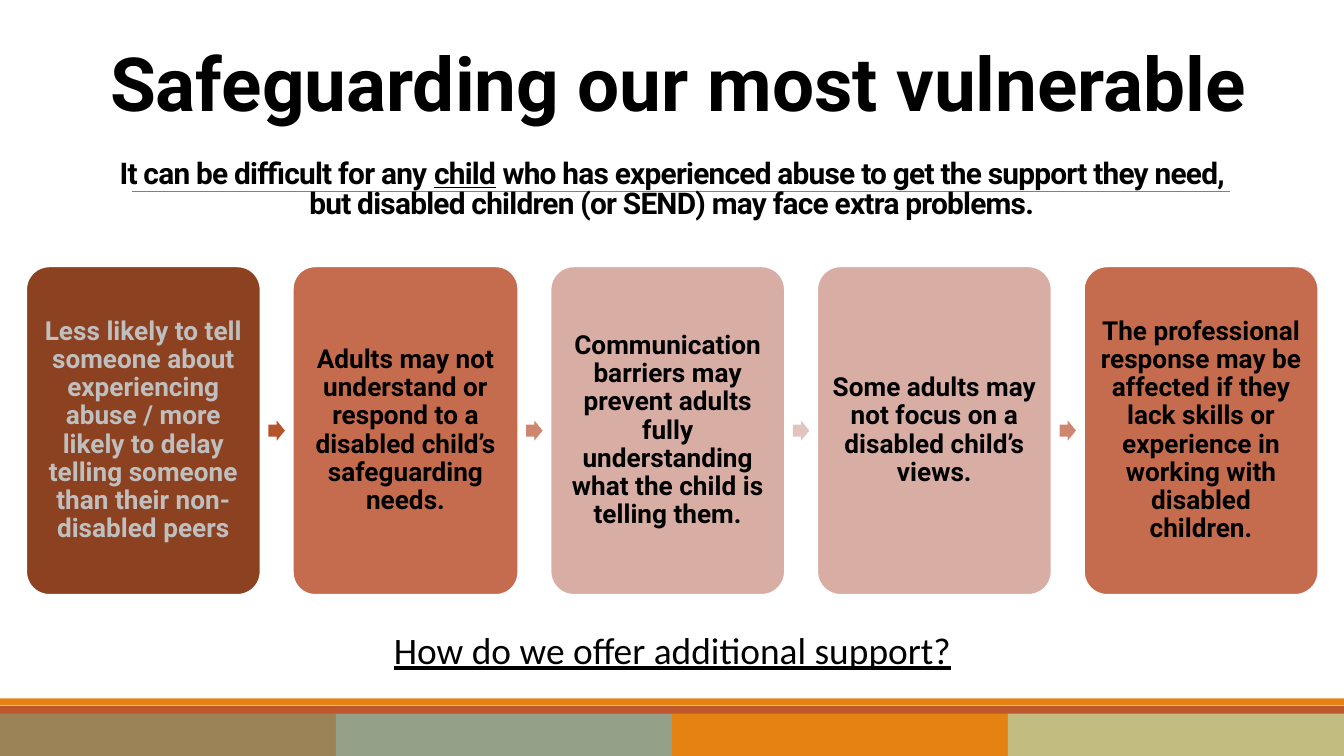
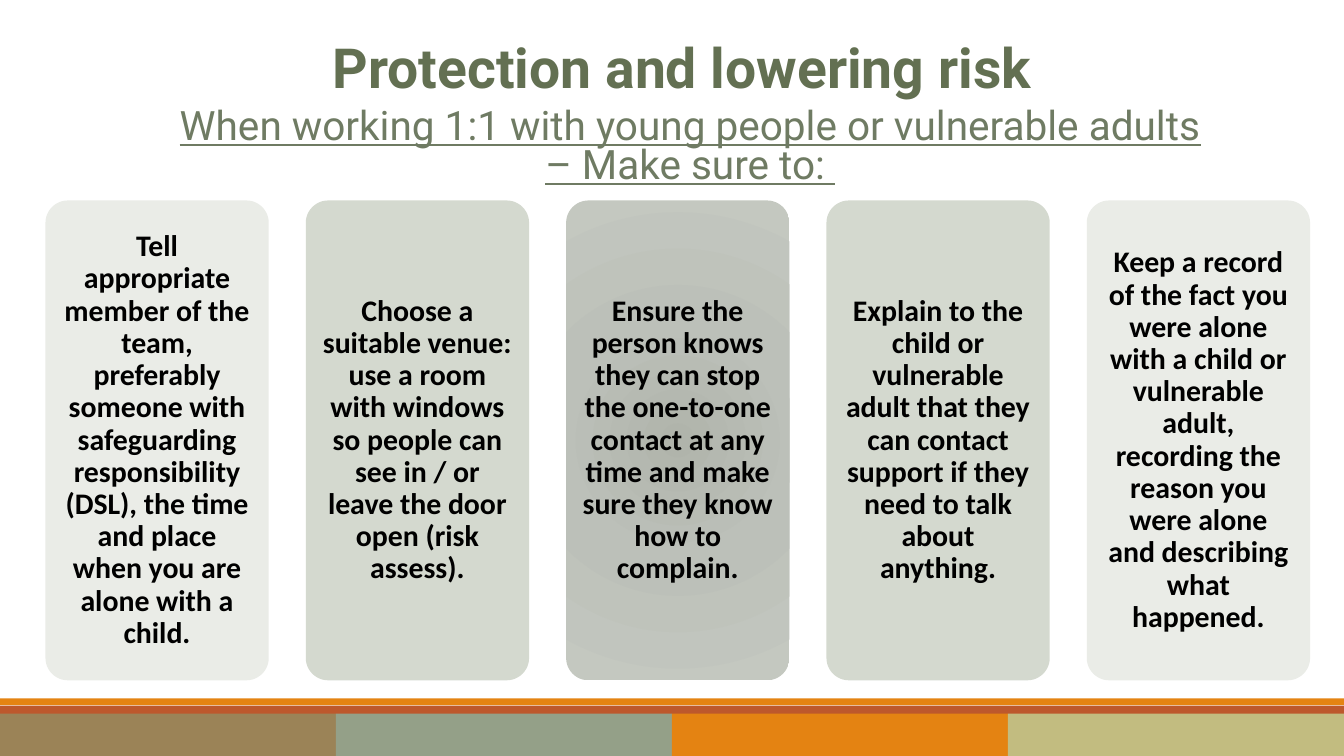
from lxml.etree import SubElement
from pptx import Presentation
from pptx.dml.color import RGBColor
from pptx.enum.shapes import MSO_CONNECTOR, MSO_SHAPE
from pptx.enum.text import MSO_ANCHOR, PP_ALIGN
from pptx.oxml.ns import qn
from pptx.util import Cm, Pt

COLORS = {
    "black": "000000", "white": "FFFFFF", "silver": "BFBFBF", "rule": "808080",
    "rust": "BD582C", "orange": "E48312", "tan": "9B8357",
    "sage": "94A088", "khaki": "C2BC80",
    "brown": "8C4121", "clay": "C66C4E", "blush": "D8ADA3",
    "arrow rust": "B5542A", "arrow clay": "CF8670", "arrow blush": "E1C4BE",
    "title green": "637052", "subtitle green": "6F7B63",
    "mist": "EAECE7", "pale sage": "D4D9CF",
    "core gray": "B0B4AB", "mid gray": "BCC0B9", "edge gray": "C4C8C0",
}
SLIDE_WIDTH, SLIDE_HEIGHT = 25.4, 14.29
HEADING_FONT, BODY_FONT = "Roboto", "Calibri"

# Card text, card fill, text colour, card width, fill of the arrow that follows
BARRIERS = [
    ("Less likely to tell someone about experiencing abuse / more likely to delay "
     "telling someone than their non-disabled peers",
     "brown", "silver", 4.44, "arrow rust"),
    ("Adults may not understand or respond to a disabled child’s safeguarding needs.",
     "clay", "black", 4.27, "arrow clay"),
    ("Communication barriers may prevent adults fully understanding what the child "
     "is telling them.", "blush", "black", 4.44, "arrow blush"),
    ("Some adults may not focus on a disabled child’s views.",
     "blush", "black", 4.44, "arrow clay"),
    ("The professional response may be affected if they lack skills or experience in "
     "working with disabled children.", "clay", "black", 4.44, None),
]
PRECAUTIONS = [
    ("Tell appropriate member of the team, preferably someone with safeguarding "
     "responsibility (DSL), the time and place when you are alone with a child.", "mist"),
    ("Choose a suitable venue: use a room with windows so people can see in / or "
     "leave the door open (risk assess).", "pale sage"),
    ("Ensure the person knows they can stop the one-to-one contact at any time and "
     "make sure they know how to complain.", "edge gray"),
    ("Explain to the child or vulnerable adult that they can contact support if they "
     "need to talk about anything.", "pale sage"),
    ("Keep a record of the fact you were alone with a child or vulnerable adult, "
     "recording the reason you were alone and describing what happened.", "mist"),
]


def rgb(name):
    return RGBColor.from_string(COLORS[name])


def lengths(*values):
    return [Cm(value) for value in values]


def add_block(slide, kind, box, fill):
    shape = slide.shapes.add_shape(kind, *lengths(*box))
    shape.shadow.inherit = False
    shape.fill.solid()
    shape.fill.fore_color.rgb = rgb(fill)
    shape.line.fill.background()
    return shape


def style_paragraph(paragraph, font, size, color, bold=False, underline=None, spacing=1.0):
    paragraph.alignment = PP_ALIGN.CENTER
    paragraph.line_spacing = spacing
    paragraph.font.name = font
    paragraph.font.size = Pt(size)
    paragraph.font.bold = bold
    paragraph.font.underline = underline
    paragraph.font.color.rgb = rgb(color)


def add_text(slide, box, text, *style, anchor=MSO_ANCHOR.TOP, **options):
    frame = slide.shapes.add_textbox(*lengths(*box)).text_frame
    frame.word_wrap = True
    frame.vertical_anchor = anchor
    paragraph = frame.paragraphs[0]
    if text:
        paragraph.add_run().text = text
    style_paragraph(paragraph, *style, **options)
    return frame


def add_card(slide, box, text, fill, font, size, color, inset):
    card = add_block(slide, MSO_SHAPE.ROUNDED_RECTANGLE, box, fill)
    card.adjustments[0] = 0.1
    frame = card.text_frame
    frame.word_wrap = True
    frame.vertical_anchor = MSO_ANCHOR.MIDDLE
    frame.margin_left = frame.margin_right = Cm(inset)
    frame.margin_top = frame.margin_bottom = Cm(inset)
    paragraph = frame.paragraphs[0]
    paragraph.add_run().text = text
    style_paragraph(paragraph, font, size, color, bold=True, spacing=0.9)
    return card


def fill_radially(shape, stops):
    """Fill from the centre outwards with (position in percent, colour name) stops."""
    shape.fill.gradient()
    gradient = shape.element.spPr.find(qn("a:gradFill"))
    gradient.clear()
    stop_list = SubElement(gradient, qn("a:gsLst"))
    for position, color in stops:
        stop = SubElement(stop_list, qn("a:gs"), pos=str(position * 1000))
        SubElement(stop, qn("a:srgbClr"), val=COLORS[color])
    circle = SubElement(gradient, qn("a:path"), path="circle")
    SubElement(circle, qn("a:fillToRect"), {side: "50000" for side in "ltrb"})


def add_rule(slide, left, right, top):
    rule = slide.shapes.add_connector(
        MSO_CONNECTOR.STRAIGHT, *lengths(left, top, right, top))
    rule.line.color.rgb = rgb("rule")
    rule.line.width = Pt(0.5)
    SubElement(rule.element.spPr, qn("a:effectLst"))


def add_footer(slide):
    add_block(slide, MSO_SHAPE.RECTANGLE, (0, 13.34, SLIDE_WIDTH, 0.95), "rust")
    add_block(slide, MSO_SHAPE.RECTANGLE, (0, 13.2, SLIDE_WIDTH, 0.13), "orange")
    width = SLIDE_WIDTH / 4
    for index, color in enumerate(("tan", "sage", "orange", "khaki")):
        add_block(slide, MSO_SHAPE.RECTANGLE, (index * width, 13.49, width, 0.8), color)


def add_slide(presentation):
    slide = presentation.slides.add_slide(presentation.slide_layouts[6])
    add_footer(slide)
    return slide


def add_intro(slide):
    frame = add_text(slide, (1.65, 2.6, 22.1, 2), "", HEADING_FONT, 16, "black",
                     bold=True, spacing=0.85, anchor=MSO_ANCHOR.MIDDLE)
    for text, underline in (
            ("It can be difficult for any ", None), ("child", True),
            (" who has experienced abuse to get the support they need, "
             "but disabled children (or SEND) may face extra problems.", None)):
        run = frame.paragraphs[0].add_run()
        run.text = text
        run.font.underline = underline
        run.font.size = Pt(16)
        run.font.element.set("spc", "-40") if hasattr(run.font, "element") else \
            run._r.get_or_add_rPr().set("spc", "-40")


def build_vulnerable_slide(presentation):
    slide = add_slide(presentation)
    add_rule(slide, 2.49, 23.24, 3.62)
    add_intro(slide)
    left, top, height, gap = 0.49, 5.03, 6.22, 0.6
    arrow_width, arrow_height = 0.31, 0.38
    for text, fill, color, width, arrow_fill in BARRIERS:
        card = add_card(slide, (left, top, width, height), text, fill,
                        HEADING_FONT, 14, color, 0.15)
        card.line.color.rgb = rgb("white")
        card.line.width = Pt(1.25)
        left += width + gap
        if arrow_fill:
            arrow = add_block(
                slide, MSO_SHAPE.RIGHT_ARROW,
                (left - (gap + arrow_width) / 2, top + (height - arrow_height) / 2,
                 arrow_width, arrow_height), arrow_fill)
            arrow.adjustments[0] = 0.6
    add_text(slide, (0.23, 0.58, 25.17, 1.96), "Safeguarding our most vulnerable",
             HEADING_FONT, 40, "black", bold=True)
    add_text(slide, (2.84, 11.73, 19.74, 1.12), "How do we offer additional support?",
             BODY_FONT, 20, "black", underline=True)


def build_protection_slide(presentation):
    slide = add_slide(presentation)
    add_text(slide, (4.01, 0.74, 17.78, 1.4), "Protection and lowering risk",
             HEADING_FONT, 29.6, "title green", bold=True, spacing=0.8)
    subtitle = add_text(
        slide, (2.62, 1.95, 20.62, 1.83),
        "When working 1:1 with young people or vulnerable adults – Make sure to: ",
        HEADING_FONT, 21.7, "subtitle green", underline=True, spacing=0.8)
    subtitle.margin_left = Cm(0.48)
    left, width, gap = 0.86, 4.22, 0.7
    for index, (text, fill) in enumerate(PRECAUTIONS):
        card = add_card(slide, (left + index * (width + gap), 3.79, width, 9.07),
                        text, fill, BODY_FONT, 16, "black", 0.18)
        if fill == "edge gray":
            fill_radially(card, [(0, "core gray"), (45, "mid gray"), (100, "edge gray")])


def main():
    presentation = Presentation()
    presentation.slide_width, presentation.slide_height = lengths(SLIDE_WIDTH, SLIDE_HEIGHT)
    build_vulnerable_slide(presentation)
    build_protection_slide(presentation)
    presentation.save("out.pptx")


if __name__ == "__main__":
    main()
